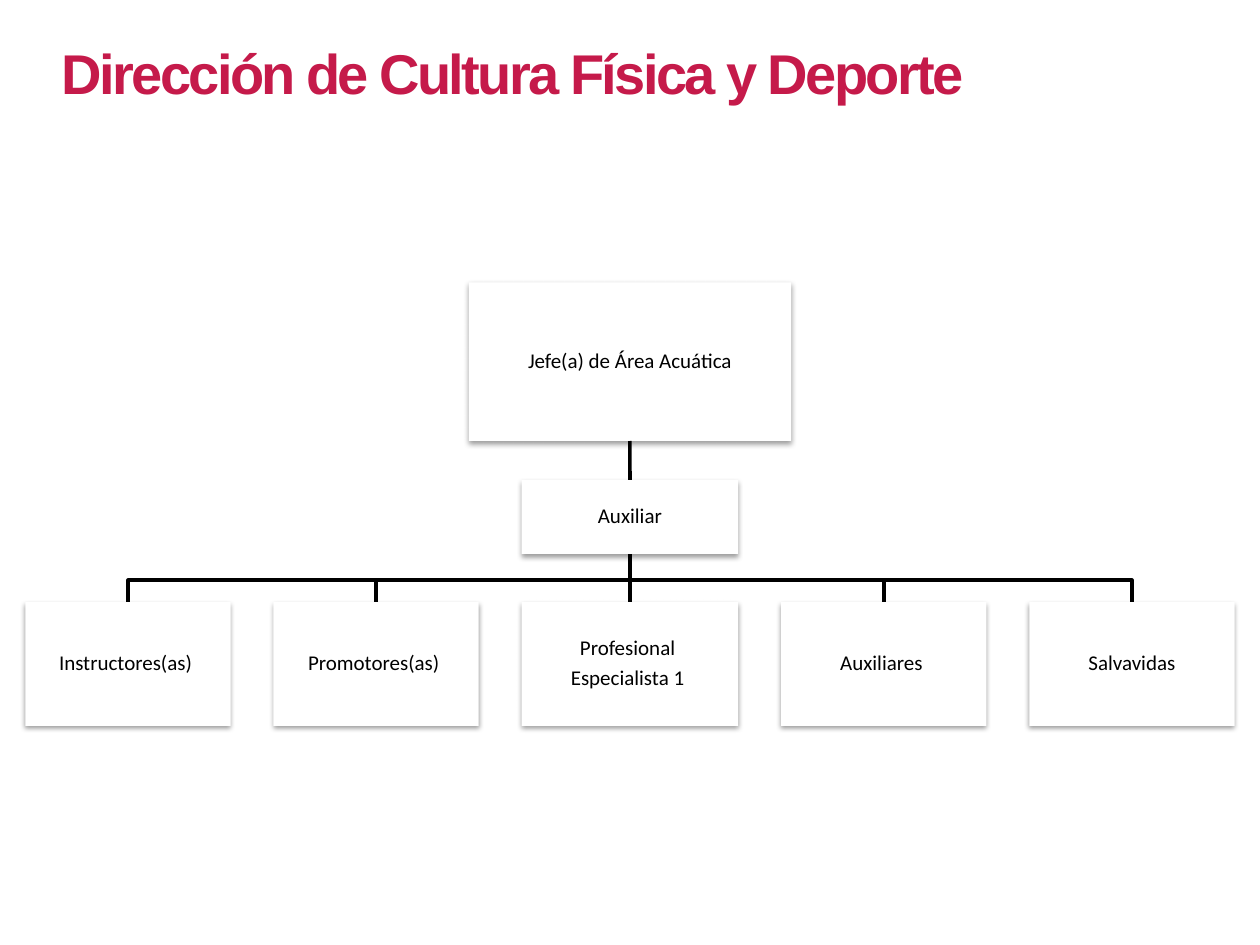
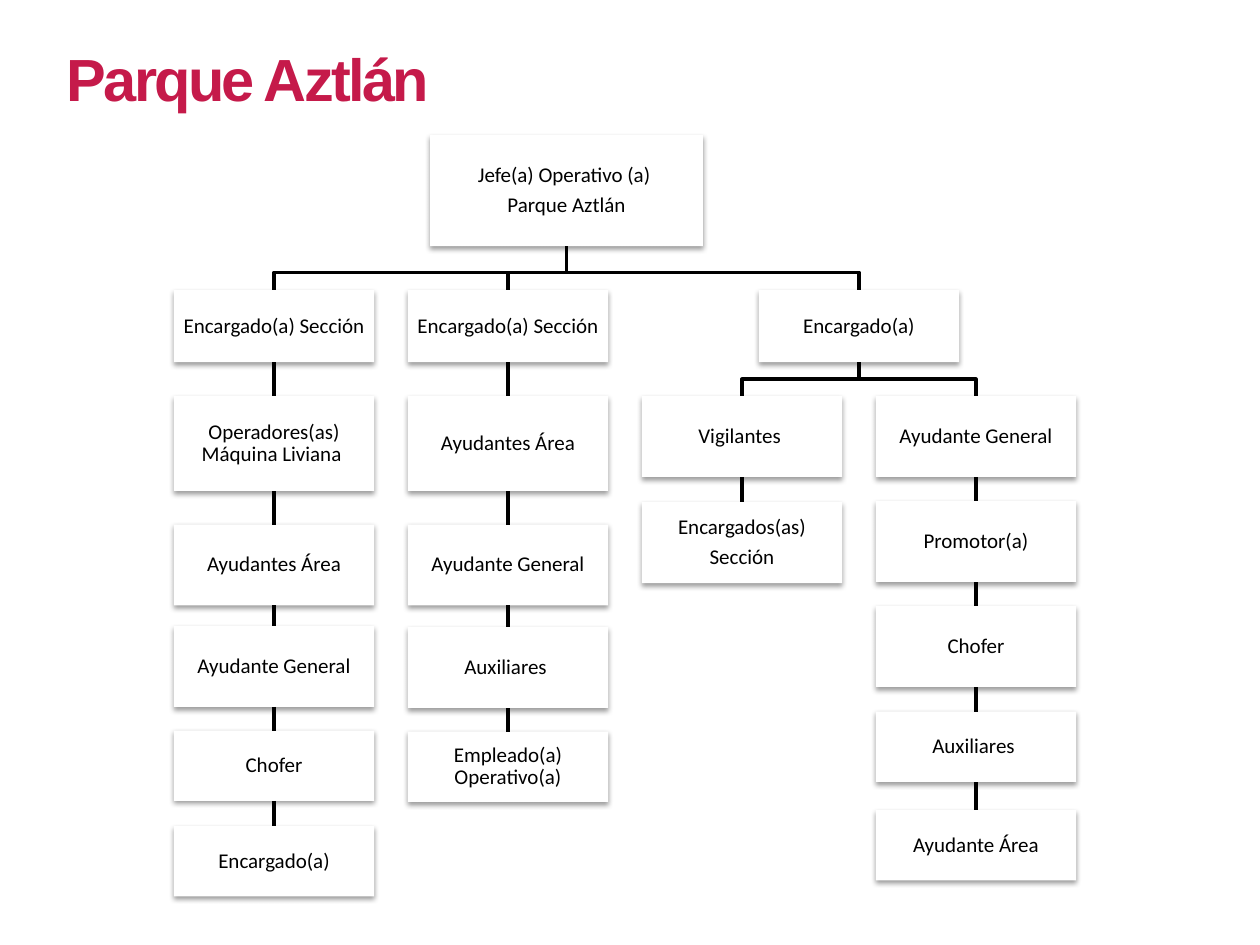
from lxml.etree import SubElement
from pptx import Presentation
from pptx.dml.color import RGBColor
from pptx.enum.shapes import MSO_CONNECTOR as Connector, MSO_SHAPE as Preset
from pptx.enum.text import MSO_ANCHOR as Anchor, MSO_AUTO_SIZE as AutoSize, PP_ALIGN as Align
from pptx.oxml.ns import qn
from pptx.util import Pt

CRIMSON = RGBColor(0xC5, 0x1A, 0x4A)
BLACK = RGBColor(0, 0, 0)
WHITE = RGBColor(255, 255, 255)


class OrgChart:
    """Style of the organisation charts and the slide being drawn."""

    title_font, box_font = "Arial", "Calibri"
    box_size, line_width, inset = Pt(12), Pt(2), Pt(0.7)
    top_site, bottom_site = 0, 2

    def __init__(self, presentation):
        self.presentation = presentation
        self.slide = None

    def new_slide(self):
        self.slide = self.presentation.slides.add_slide(self.presentation.slide_layouts[6])

    def title(self, text, left, top, width, height, size):
        shape = self.slide.shapes.add_textbox(Pt(left), Pt(top), Pt(width), Pt(height))
        frame = shape.text_frame
        frame.word_wrap = True
        frame.auto_size = AutoSize.SHAPE_TO_FIT_TEXT
        run = frame.paragraphs[0].add_run()
        run.text = text
        run.font.name, run.font.size, run.font.bold = self.title_font, Pt(size), True
        run.font.color.rgb = CRIMSON
        run.font._element.set("spc", "-150")

    def box(self, centre, top, width, height, *lines):
        shape = self.slide.shapes.add_shape(
            Preset.RECTANGLE, Pt(centre - width / 2), Pt(top), Pt(width), Pt(height))
        shape.fill.solid()
        shape.fill.fore_color.rgb = WHITE
        shape.line.fill.background()
        self.soft_shadow(shape)
        frame = shape.text_frame
        frame.word_wrap = True
        frame.vertical_anchor = Anchor.MIDDLE
        frame.margin_left = frame.margin_right = self.inset
        frame.margin_top = frame.margin_bottom = self.inset
        for index, line in enumerate(lines):
            paragraph = frame.add_paragraph() if index else frame.paragraphs[0]
            paragraph.alignment = Align.CENTER
            paragraph.line_spacing = 0.9
            paragraph.space_after = Pt(4.2)
            run = paragraph.add_run()
            run.text = line
            run.font.name, run.font.size = self.box_font, self.box_size
            run.font.color.rgb = BLACK
        return shape

    def soft_shadow(self, shape):
        shape.shadow.inherit = False
        effects = shape._element.spPr.find(qn("a:effectLst"))
        shadow = SubElement(effects, qn("a:outerShdw"), blurRad=str(Pt(3.1)),
                            dist=str(Pt(1.6)), dir="5400000", rotWithShape="0")
        colour = SubElement(shadow, qn("a:srgbClr"), val=str(BLACK))
        SubElement(colour, qn("a:alpha"), val="38000")

    def stroke(self, line):
        line.color.rgb = BLACK
        line.width = self.line_width

    def link(self, parent, child):
        """Straight line from the foot of one box to the head of the next."""
        connector = self.slide.shapes.add_connector(Connector.STRAIGHT, 0, 0, 0, 0)
        connector.begin_connect(parent, self.bottom_site)
        connector.end_connect(child, self.top_site)
        self.stroke(connector.line)
        SubElement(connector._element.spPr, qn("a:effectLst"))

    def branch(self, parent, children, drop):
        """Lines to each child, bending at the given height above it."""
        start_x = parent.left + parent.width // 2
        start_y = parent.top + parent.height
        for child in children:
            end_x = child.left + child.width // 2
            if abs(end_x - start_x) < Pt(1):
                self.link(parent, child)
                continue
            bend_y = child.top - Pt(drop)
            builder = self.slide.shapes.build_freeform(start_x, start_y, scale=1.0)
            builder.add_line_segments(
                [(start_x, bend_y), (end_x, bend_y), (end_x, child.top)], close=False)
            elbow = builder.convert_to_shape()
            elbow.fill.background()
            elbow.shadow.inherit = False
            self.stroke(elbow.line)

    def column(self, centre, width, rows):
        """Boxes one under another, linked in a chain; gives back the first."""
        boxes = [self.box(centre, top, width, height, *lines) for top, height, *lines in rows]
        for upper, lower in zip(boxes, boxes[1:]):
            self.link(upper, lower)
        return boxes[0]


def aquatic_area(chart):
    chart.new_slide()
    chart.title("Dirección de Cultura Física y Deporte", 28.1, 18.7, 553.7, 46, 32)

    # Head and assistant
    middle, wide, narrow, gap = 360, 123.8, 117.3, 24.5
    head = chart.box(middle, 161.4, 184.2, 90.6, "Jefe(a) de Área Acuática")
    assistant = chart.box(middle, 274.3, wide, 42.3, "Auxiliar")
    chart.link(head, assistant)

    # Staff row, spread evenly about the middle
    staff = [("Instructores(as) ",), ("Promotores(as) ",), ("Profesional ", "Especialista 1 "),
             ("Auxiliares ",), ("Salvavidas",)]
    widths = [narrow, narrow, wide, narrow, narrow]
    left = middle - (sum(widths) + gap * (len(widths) - 1)) / 2
    row = []
    for width, lines in zip(widths, staff):
        row.append(chart.box(left + width / 2, 344.1, width, 70.7, *lines))
        left += width + gap
    chart.branch(assistant, row, 12.5)


def aztlan_park(chart):
    chart.new_slide()
    chart.title("Parque Aztlán", 31, 20.2, 254.9, 49.7, 34)

    # Four equal columns; each parent sits midway over its outer children
    width = 114.5
    first, second, third, fourth = [156.6 + 133.7 * index for index in range(4)]
    manager_centre = (third + fourth) / 2
    head_centre = (first + manager_centre) / 2
    section_top, staff_top = 165.8, 226.4
    section, tall, medium, low = 41.2, 54.2, 46.2, 40.2

    head = chart.box(head_centre, 77.1, 156, 63.6, "Jefe(a) Operativo (a) ", "Parque Aztlán")

    # Sections
    machinery = chart.column(first, width, [
        (section_top, section, "Encargado(a) Sección"),
        (staff_top, tall, "Operadores(as) Máquina Liviana "),
        (299.8, medium, "Ayudantes Área"),
        (357.8, medium, "Ayudante General"),
        (417.5, low, "Chofer"),
        (472.1, low, "Encargado(a)"),
    ])
    grounds = chart.column(second, width, [
        (section_top, section, "Encargado(a) Sección"),
        (staff_top, tall, "Ayudantes Área"),
        (299.8, medium, "Ayudante General"),
        (358.4, medium, "Auxiliares "),
        (418.1, low, "Empleado(a) Operativo(a)"),
    ])
    manager = chart.box(manager_centre, section_top, width, section, "Encargado(a)")
    chart.branch(head, [machinery, grounds, manager], 10.2)

    # Staff under the manager
    guards = chart.column(third, width, [
        (staff_top, medium, "Vigilantes "),
        (287, medium, "Encargados(as)", "Sección"),
    ])
    helpers = chart.column(fourth, width, [
        (staff_top, medium, "Ayudante General"),
        (286.4, medium, "Promotor(a)"),
        (346.4, medium, "Chofer"),
        (406.7, low, "Auxiliares "),
        (462.9, low, "Ayudante Área"),
    ])
    chart.branch(manager, [guards, helpers], 9.7)


def main():
    presentation = Presentation()
    presentation.slide_width, presentation.slide_height = Pt(720), Pt(540)
    chart = OrgChart(presentation)
    aquatic_area(chart)
    aztlan_park(chart)
    presentation.save("out.pptx")


if __name__ == "__main__":
    main()
